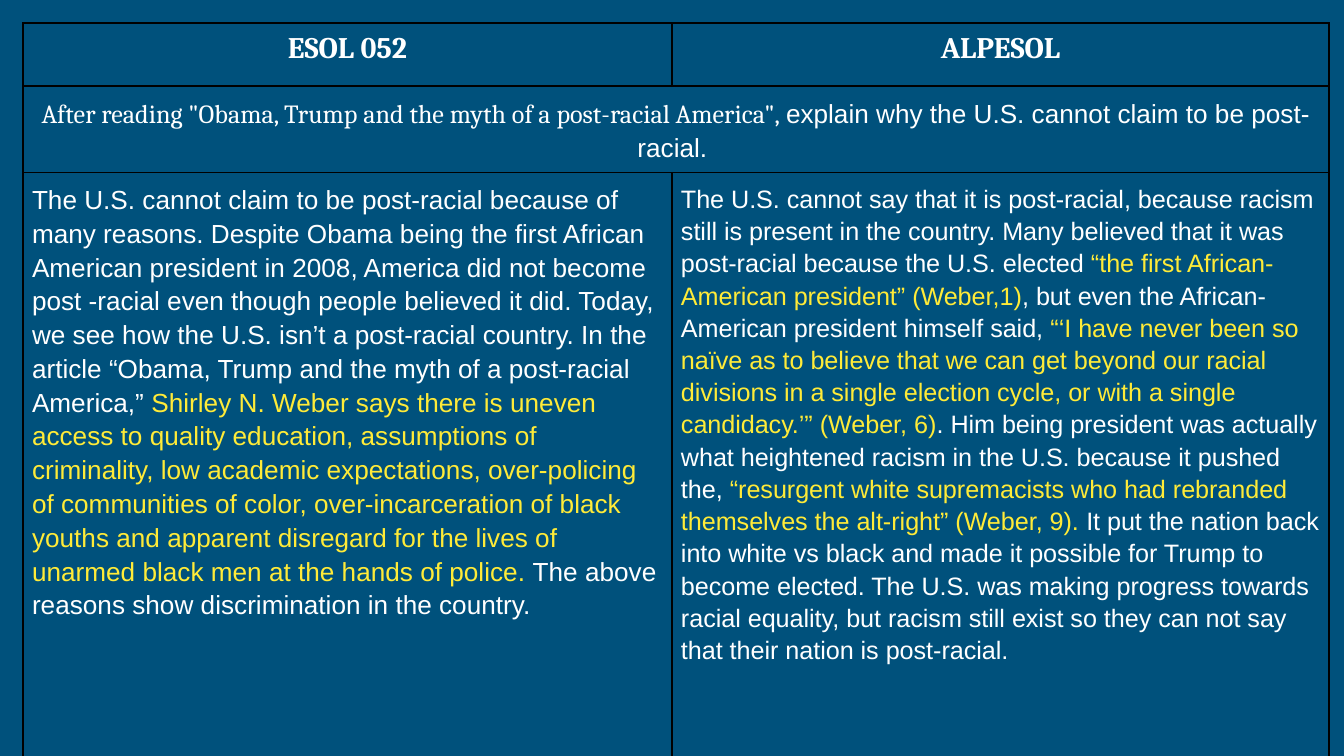
from pptx import Presentation
from pptx.dml.color import RGBColor
from pptx.enum.text import MSO_ANCHOR, PP_ALIGN
from pptx.oxml import parse_xml
from pptx.oxml.ns import nsdecls
from pptx.util import Emu, Pt

PX = 914400 / 134.4  # EMU in one px
BLUE = RGBColor(0x00, 0x51, 0x7C)
WHITE = RGBColor(0xFF, 0xFF, 0xFF)
YELLOW = RGBColor(0xFF, 0xEB, 0x38)
BLACK = RGBColor(0x00, 0x00, 0x00)
CENTER, LEFT = PP_ALIGN.CENTER, PP_ALIGN.LEFT
TOP = MSO_ANCHOR.TOP
HEADING, BODY = "Cambria", "Arial"

COL_WIDTHS = (649, 657)
ROW_HEIGHTS = (63, 79, 610)
INSET = 9

HEADERS = ("ESOL 052", "ALPESOL")
PROMPT = (
    ('After reading "Obama, Trump and the myth of a post-racial America", ', HEADING),
    ("explain why the U.S. cannot claim to be post-racial. ", BODY),
)
# Each answer: text size, then runs that alternate plain and highlighted
ANSWERS = (
    (14, (
        "The U.S. cannot claim to be post-racial because of many reasons. Despite Obama "
        "being the first African American president in 2008, America did not become "
        "post -racial even though people believed it did. Today, we see how the U.S. "
        "isn’t a post-racial country. In the article “Obama, Trump and the myth of a "
        "post-racial America,” ",
        "Shirley N. Weber says there is uneven access to quality education, assumptions "
        "of criminality, low academic expectations, over-policing of communities of "
        "color, over-incarceration of black youths and apparent disregard for the lives "
        "of unarmed black men at the hands of police.",
        " The above reasons show discrimination in the country.",
    )),
    (13.5, (
        "The U.S. cannot say that it is post-racial, because racism still is present in "
        "the country. Many believed that it was post-racial because the U.S. elected ",
        "“the first African-American president” (Weber,1)",
        ", but even the African-American president himself said, ",
        "“‘I have never been so naïve as to believe that we can get beyond our racial "
        "divisions in a single election cycle, or with a single candidacy.’” (Weber, 6)",
        ". Him being president was actually what heightened racism in the U.S. because "
        "it pushed the, ",
        "“resurgent white supremacists who had rebranded themselves the alt-right” "
        "(Weber, 9). ",
        "It put the nation back into white vs black and made it possible for Trump to "
        "become elected. The U.S. was making progress towards racial equality, but "
        "racism still exist so they can not say that their nation is post-racial.",
    )),
)


def px(n):
    return Emu(round(n * PX))


def add_run(p, text, size, font, color=WHITE, bold=False):
    r = p.add_run()
    r.text = text
    r.font.size = Pt(size)
    r.font.name = font
    r.font.bold = bold
    r.font.color.rgb = color


def style_cell(cell):
    cell.margin_left = cell.margin_right = px(INSET)
    cell.margin_top = cell.margin_bottom = px(INSET)
    cell.vertical_anchor = TOP
    tcPr = cell._tc.get_or_add_tcPr()
    for side in ("lnL", "lnR", "lnT", "lnB"):
        tcPr.append(parse_xml(
            f'<a:{side} {nsdecls("a")} w="{Pt(1)}"><a:solidFill>'
            f'<a:srgbClr val="{BLACK}"/></a:solidFill></a:{side}>'))
    cell.fill.background()


def start_paragraph(cell, align, spacing=None):
    p = cell.text_frame.paragraphs[0]
    p.alignment = align
    p.line_spacing = spacing
    return p


def add_comparison(s, left, top):
    frame = s.shapes.add_table(len(ROW_HEIGHTS), len(COL_WIDTHS), px(left), px(top),
                               px(sum(COL_WIDTHS)), px(sum(ROW_HEIGHTS)))
    table = frame.table
    table.first_row = table.horz_banding = False
    for col, width in zip(table.columns, COL_WIDTHS):
        col.width = px(width)
    for row, height in zip(table.rows, ROW_HEIGHTS):
        row.height = px(height)
    for cell in table.iter_cells():
        style_cell(cell)

    # Course names
    for c, name in enumerate(HEADERS):
        add_run(start_paragraph(table.cell(0, c), CENTER), name, 16, HEADING, bold=True)

    # Shared prompt
    prompt = table.cell(1, 0)
    prompt.merge(table.cell(1, 1))
    p = start_paragraph(prompt, CENTER, 1.15)
    for text, font in PROMPT:
        add_run(p, text, 14, font)

    # Student answers
    for c, (size, runs) in enumerate(ANSWERS):
        p = start_paragraph(table.cell(2, c), LEFT, 1.15)
        for i, text in enumerate(runs):
            add_run(p, text, size, BODY, YELLOW if i % 2 else WHITE)


def main():
    prs = Presentation()
    prs.slide_width, prs.slide_height = px(1344), px(756)
    s = prs.slides.add_slide(prs.slide_layouts[6])
    s.background.fill.solid()
    s.background.fill.fore_color.rgb = BLUE
    add_comparison(s, 23, 23)
    prs.save("out.pptx")


if __name__ == "__main__":
    main()
